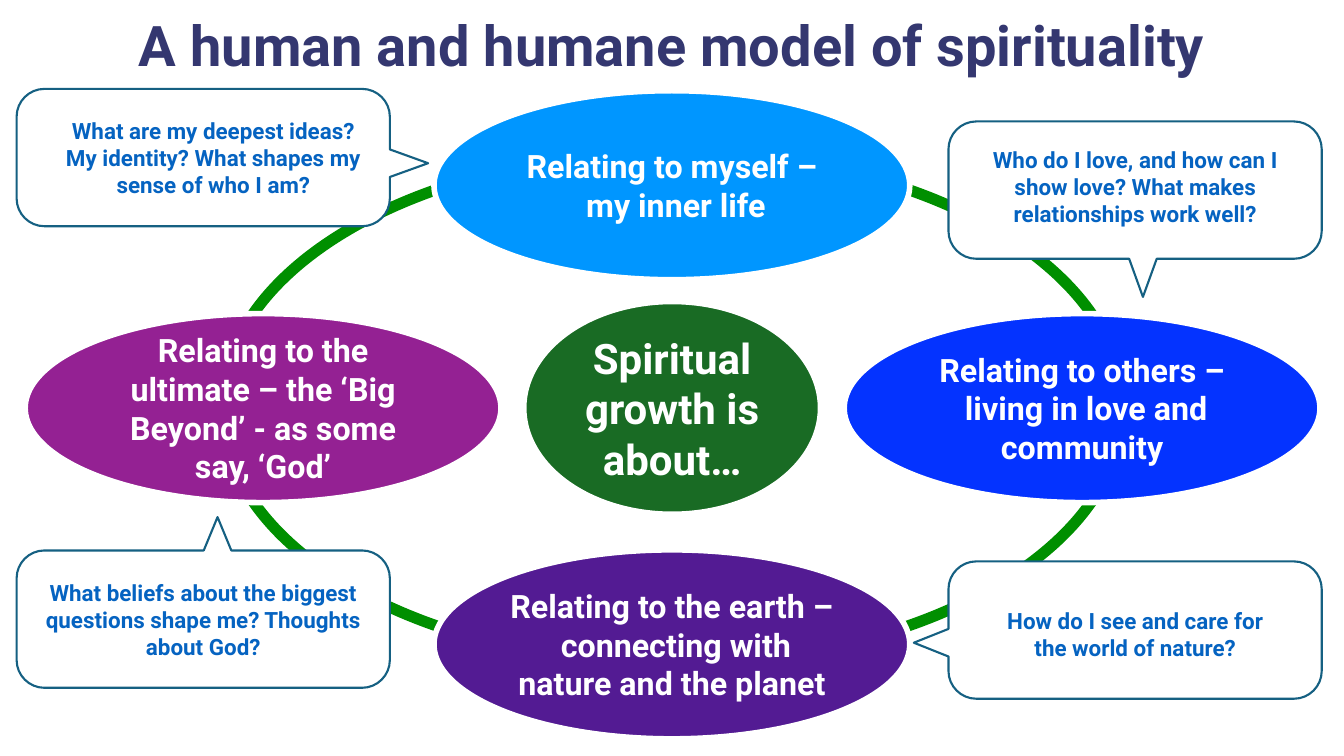
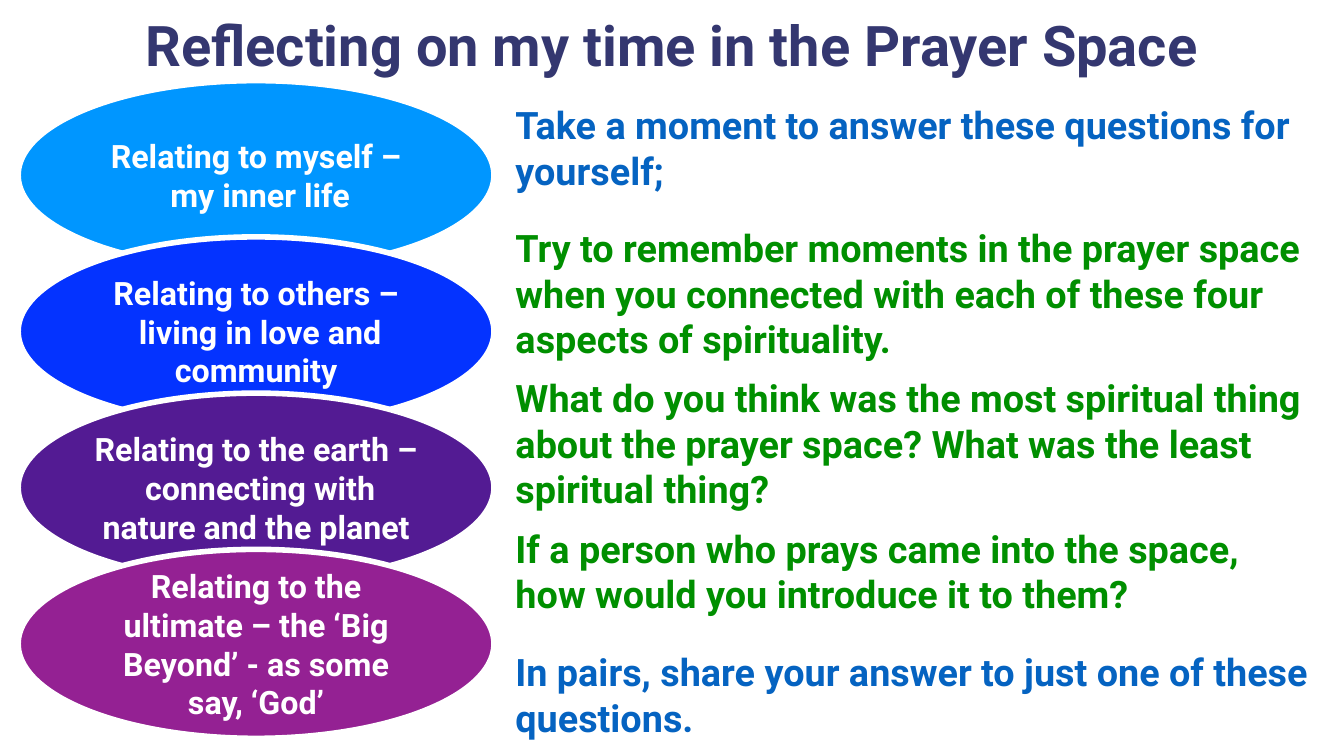
"""Build two slides on a human and humane model of spirituality."""
from lxml.etree import SubElement
from pptx import Presentation
from pptx.dml.color import RGBColor
from pptx.enum.shapes import MSO_SHAPE
from pptx.enum.text import MSO_ANCHOR, MSO_AUTO_SIZE, PP_ALIGN
from pptx.oxml.ns import qn
from pptx.util import Pt

FONT = "Roboto"
NAVY = RGBColor(0x34, 0x37, 0x70)
WHITE = RGBColor(0xFF, 0xFF, 0xFF)
FOREST = RGBColor(0x19, 0x6B, 0x24)
GREEN = RGBColor(0x00, 0x8F, 0x00)
LINK_BLUE = RGBColor(0x05, 0x63, 0xC1)
TEAL = RGBColor(0x15, 0x60, 0x82)
SKY = RGBColor(0x00, 0x96, 0xFF)
BLUE = RGBColor(0x04, 0x33, 0xFF)
VIOLET = RGBColor(0x53, 0x1B, 0x93)
MAGENTA = RGBColor(0x94, 0x21, 0x93)

HARD_SPACE = chr(160)
MODEL_TITLE = "A human and humane model of spirituality"
REFLECTION_TITLE = "Reflecting on my time in the Prayer Space"
CENTRE_TEXT = "Spiritual growth is about…"

ASPECTS = [
    (f"Relating to myself –{HARD_SPACE}my inner life", SKY),
    (f"Relating to others –{HARD_SPACE}living in love and community", BLUE),
    (f"Relating to the earth –{HARD_SPACE}connecting with nature and the planet", VIOLET),
    (f"Relating to the ultimate – the ‘Big Beyond’ -{HARD_SPACE}as some say, ‘God’", MAGENTA),
]
RING_POSITIONS = [(620, 129.6), (1206, 448), (620, 785.5), (36, 448)]
LEFT_CALLOUT, RIGHT_CALLOUT = 23.75, 1355
TOP_SIDE, RIGHT_SIDE, BOTTOM_SIDE, LEFT_SIDE = range(4)
CALLOUTS = [
    dict(left=LEFT_CALLOUT, top=127, tail_side=RIGHT_SIDE, tip=(611.6, 233.2)),
    dict(left=RIGHT_CALLOUT, top=173.5, tail_side=BOTTOM_SIDE, tip=(1632.8, 424.2)),
    dict(left=RIGHT_CALLOUT, top=802, tail_side=LEFT_SIDE, tip=(1305.5, 918.2)),
    dict(left=LEFT_CALLOUT, top=786.4, tail_side=TOP_SIDE, tip=(310.8, 738.7)),
]
PROMPTS = [
    ("Who do I love, and how can I show love? What makes relationships work well?",
     1388.2, 201.6, 131),
    ("What beliefs about the biggest questions shape me? Thoughts about God?",
     56.8, 820.5, 131),
    ("How do I see and care for\nthe world of nature?", 1388.2, 860.4, 92.2),
    ("What are my deepest ideas? My identity? What shapes my sense of who I am?",
     71.3, 160.6, 131),
]
OPENING = "Take a moment to answer these questions for yourself;"
QUESTIONS = [
    "Try to remember moments in the prayer space when you connected with each of these four "
    "aspects of spirituality.",
    "What do you think was the most spiritual thing about the prayer space? What was the least "
    "spiritual thing?",
    "If a person who prays came into the space, how would you introduce it to them?",
]
CLOSING = "In pairs, share your answer to just one of these questions."

ASPECT_SIZE = (679.7, 270)
STACK_LEFT, STACK_TOP, STACK_STEP = 26, 115.2, 223.2
CALLOUT_WIDTH, CALLOUT_HEIGHT, CORNER, TAIL_HALF = 533.2, 196.2, 39.7, 19.7
ARC_PULL = 0.55
QUESTION_LEFT, QUESTION_WIDTH = 729.2, 1157.8


def write(shape, *texts, size, color, align=PP_ALIGN.CENTER, anchor=MSO_ANCHOR.TOP,
          line_spacing=1.0, gap=0, fit=MSO_AUTO_SIZE.NONE):
    """Fill a shape with formatted, unbulleted paragraphs."""
    frame = shape.text_frame
    frame.word_wrap = True
    frame.auto_size = fit
    frame.vertical_anchor = anchor
    frame.margin_left = frame.margin_right = frame.margin_top = frame.margin_bottom = Pt(7.2)
    for index, text in enumerate(texts):
        para = frame.add_paragraph() if index else frame.paragraphs[0]
        para.text = text
        para.alignment = align
        para.line_spacing = line_spacing
        para.space_before = Pt(gap if index else 0)
        if shape.is_placeholder:
            properties = para._p.get_or_add_pPr()
            properties.set("marL", "0")
            properties.set("indent", "0")
            SubElement(properties, qn("a:buNone"))
        for span in para.runs:
            span.font.name = FONT
            span.font.size = Pt(size)
            span.font.bold = True
            span.font.color.rgb = color


def place(shape, left, top, width, height):
    """Move and size a shape in points."""
    shape.left, shape.top, shape.width, shape.height = map(Pt, (left, top, width, height))


def add_slide(deck, layout, title):
    """Add a slide with the shared title."""
    slide = deck.slides.add_slide(deck.slide_layouts.get_by_name(layout))
    place(slide.shapes.title, 42.5, 0, 1835.3, 138.2)
    write(slide.shapes.title, title, size=80, color=NAVY, anchor=MSO_ANCHOR.MIDDLE,
          line_spacing=0.9)
    return slide


def paint(shape, fill, line, weight):
    """Set fill and outline, and drop the shadow."""
    shape.shadow.inherit = False
    if fill is None:
        shape.fill.background()
    else:
        shape.fill.solid()
        shape.fill.fore_color.rgb = fill
    shape.line.color.rgb = line
    shape.line.width = Pt(weight)


def add_ellipse(slide, left, top, width, height, fill=None, line=WHITE, weight=8, text=None,
                size=46):
    """Add an ellipse with optional centred white text."""
    ellipse = slide.shapes.add_shape(MSO_SHAPE.OVAL, *map(Pt, (left, top, width, height)))
    paint(ellipse, fill, line, weight)
    if text:
        write(ellipse, text, size=size, color=WHITE, anchor=MSO_ANCHOR.MIDDLE)


def add_text(slide, text, left, top, width, height, **style):
    """Add a text box that fits its text."""
    box = slide.shapes.add_textbox(*map(Pt, (left, top, width, height)))
    write(box, text, color=LINK_BLUE, fit=MSO_AUTO_SIZE.SHAPE_TO_FIT_TEXT, **style)


def round_corner(segment, horizontal):
    """Turn the straight segment across a corner into a curve."""
    start, end = [(int(point.get("x")), int(point.get("y")))
                  for point in (segment.getprevious()[0], segment[0])]
    corner = (end[0], start[1]) if horizontal else (start[0], end[1])
    controls = [tuple(round(a + ARC_PULL * (c - a)) for a, c in zip(anchor, corner))
                for anchor in (start, end)]
    curve = SubElement(segment.getparent(), qn("a:cubicBezTo"))
    for x, y in controls + [end]:
        SubElement(curve, qn("a:pt"), x=str(x), y=str(y))
    segment.getparent().replace(segment, curve)


def add_callout(slide, left, top, tail_side, tip):
    """Add a rounded speech callout, outlined clockwise from its top side."""
    right, bottom = left + CALLOUT_WIDTH, top + CALLOUT_HEIGHT
    near_x, far_x = left + CORNER, right - CORNER
    near_y, far_y = top + CORNER, bottom - CORNER
    corners = [((far_x, top), (right, near_y)), ((right, far_y), (far_x, bottom)),
               ((near_x, bottom), (left, far_y)), ((left, near_y), (near_x, top))]
    bases = [(tip[0], top), (right, tip[1]), (tip[0], bottom), (left, tip[1])]
    directions = [(1, 0), (0, 1), (-1, 0), (0, -1)]
    points, curve_indexes = [], []
    for side, (corner, base, step) in enumerate(zip(corners, bases, directions)):
        if side == tail_side:
            before, after = [tuple(b + sign * TAIL_HALF * s for b, s in zip(base, step))
                             for sign in (-1, 1)]
            points += [before, tip, after]
        points += corner
        curve_indexes.append(len(points) - 1)
    builder = slide.shapes.build_freeform(Pt(near_x), Pt(top))
    builder.add_line_segments([(Pt(x), Pt(y)) for x, y in points], close=True)
    callout = builder.convert_to_shape()
    segments = list(callout._element.iter(qn("a:lnTo")))
    for side, index in enumerate(curve_indexes):
        round_corner(segments[index], horizontal=side % 2 == 0)
    paint(callout, WHITE, TEAL, 3)


def build_model(deck):
    """Build the ring of four aspects with their callouts."""
    slide = add_slide(deck, "Title Only", MODEL_TITLE)
    add_ellipse(slide, 750.2, 432.7, 420, 300, FOREST, weight=4, text=CENTRE_TEXT, size=60)
    add_ellipse(slide, 316.8, 216.7, 1287.4, 731.5, line=GREEN, weight=16)
    for (text, color), position in zip(ASPECTS, RING_POSITIONS):
        add_ellipse(slide, *position, *ASPECT_SIZE, color, text=text)
    for callout in CALLOUTS:
        add_callout(slide, **callout)
    for text, left, top, height in PROMPTS:
        add_text(slide, text, left, top, 467.3, height, size=32)


def build_reflection(deck):
    """Build the stack of aspects beside the questions."""
    slide = add_slide(deck, "Title and Content", REFLECTION_TITLE)
    for index, (text, color) in enumerate(ASPECTS):
        add_ellipse(slide, STACK_LEFT, STACK_TOP + index * STACK_STEP, *ASPECT_SIZE, color,
                    text=text)
    body = slide.placeholders[1]
    place(body, QUESTION_LEFT, 314.3, QUESTION_WIDTH, 574.6)
    write(body, *QUESTIONS, size=54, color=GREEN, align=PP_ALIGN.LEFT, gap=20)
    for text, top in ((OPENING, 138.5), (CLOSING, 920.2)):
        add_text(slide, text, QUESTION_LEFT, top, QUESTION_WIDTH, 144.7, size=54,
                 align=PP_ALIGN.LEFT)


def main():
    """Build and save the deck."""
    deck = Presentation()
    deck.slide_width, deck.slide_height = Pt(1920), Pt(1080)
    build_model(deck)
    build_reflection(deck)
    deck.save("out.pptx")


if __name__ == "__main__":
    main()
